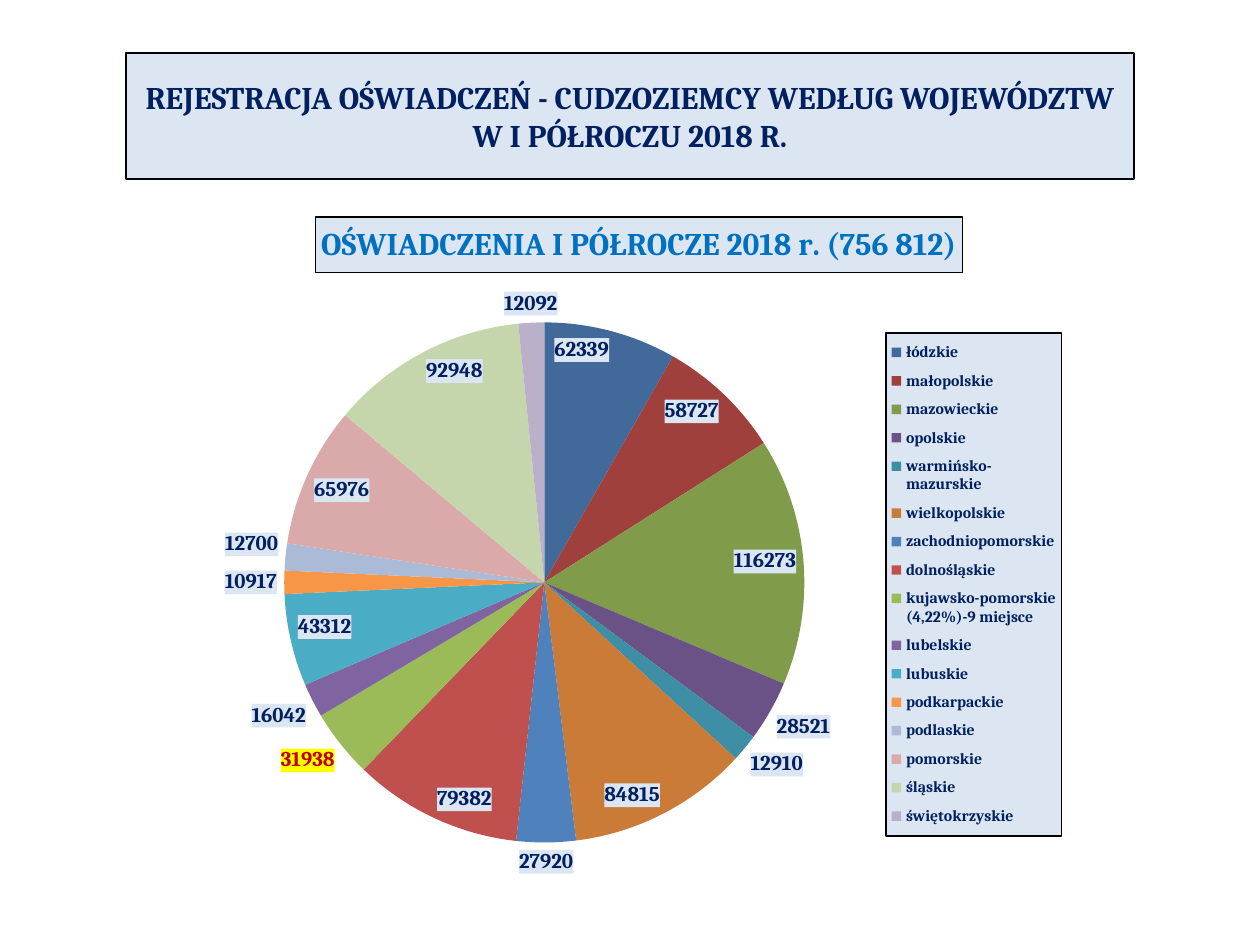
import pptx
import pptx.chart.data
import pptx.dml.color
import pptx.enum.chart
import pptx.enum.text
import pptx.oxml
import pptx.oxml.ns
import pptx.util

TITLE = "REJESTRACJA OŚWIADCZEŃ - CUDZOZIEMCY WEDŁUG WOJEWÓDZTW W I PÓŁROCZU 2018 R."
CHART_TITLE = "OŚWIADCZENIA I PÓŁROCZE 2018 r. (756 812)"
REGIONS = [
    ("łódzkie", 62339, "416A9B"),
    ("małopolskie", 58727, "9F403D"),
    ("mazowieckie", 116273, "809C4A"),
    ("opolskie", 28521, "6B5286"),
    ("warmińsko-mazurskie", 12910, "3E8EA5"),
    ("wielkopolskie", 84815, "CB7B38"),
    ("zachodniopomorskie", 27920, "4F81BD"),
    ("dolnośląskie", 79382, "C0504D"),
    ("kujawsko-pomorskie (4,22%)-9 miejsce", 31938, "9BBB59"),
    ("lubelskie", 16042, "8064A2"),
    ("lubuskie", 43312, "4BACC6"),
    ("podkarpackie", 10917, "F79646"),
    ("podlaskie", 12700, "AABAD7"),
    ("pomorskie", 65976, "D9AAA9"),
    ("śląskie", 92948, "C6D6AC"),
    ("świętokrzyskie", 12092, "BAB0C9"),
]
HIGHLIGHT = 8
INSIDE_FROM = 40000

THEME = {
    "panel": "DCE6F2", "border": "000000", "marker": "FFFF00",
    "title": {"name": "Cambria", "size": 18, "bold": True, "color": "002060"},
    "chart": {"name": "Calibri", "size": 18, "color": "000000"},
    "chart_title": {"name": "Cambria", "size": 18, "bold": True, "color": "0070C0"},
    "legend": {"name": "Cambria", "size": 9, "bold": True, "color": "002060"},
    "label": {"name": "Cambria", "size": 12, "bold": True, "color": "002060"},
    "highlight": {"name": "Cambria", "size": 12, "bold": True, "color": "C00000"},
}

PX = 914400 / 126
TITLE_BOX = (126, 53, 1008, 126)
CHART_BOX = (123, 204, 1008, 687)
PIE_BOX = (284, 322, 520, 521)
LEGEND_BOX = (886, 333, 175, 503)
CHART_TITLE_AT = (316, 217)


def emu(box):
    return [round(v * PX) for v in box]


def rgb(value):
    return pptx.dml.color.RGBColor.from_string(value)


def style(font, name):
    for key, value in THEME[name].items():
        if key == "color":
            font.color.rgb = rgb(value)
        else:
            setattr(font, key, pptx.util.Pt(value) if key == "size" else value)


def panel(shape):
    shape.fill.solid()
    shape.fill.fore_color.rgb = rgb(THEME["panel"])
    shape.line.color.rgb = rgb(THEME["border"])
    shape.line.width = pptx.util.Pt(0.75)


def box_xml(fill, line=None):
    solid = '<a:solidFill><a:srgbClr val="%s"/></a:solidFill>'
    outline = f'<a:ln w="9525">{solid % line}</a:ln>' if line else ""
    ns = pptx.oxml.ns.nsdecls("c", "a")
    return pptx.oxml.parse_xml(f"<c:spPr {ns}>{solid % fill}{outline}</c:spPr>")


def place(element, box, target=""):
    left, top, width, height = CHART_BOX
    parts = [(box[0] - left) / width, (box[1] - top) / height]
    if len(box) == 4:
        parts += [box[2] / width, box[3] / height]
    inner = f'<c:layoutTarget val="{target}"/>' if target else ""
    inner += '<c:xMode val="edge"/><c:yMode val="edge"/>'
    inner += "".join(f'<c:{k} val="{v:.3f}"/>' for k, v in zip("xywh", parts))
    ns = pptx.oxml.ns.nsdecls("c")
    layout = pptx.oxml.parse_xml(
        f"<c:layout {ns}><c:manualLayout>{inner}</c:manualLayout></c:layout>")
    for old in element.xpath("./c:layout"):
        element.remove(old)
    overlay = element.xpath("./c:overlay")
    if overlay:
        overlay[0].addprevious(layout)
    else:
        element.insert(0, layout)


def add_title(s):
    sp = s.shapes.title
    sp.left, sp.top, sp.width, sp.height = emu(TITLE_BOX)
    panel(sp)
    tf = sp.text_frame
    tf.word_wrap = True
    tf.vertical_anchor = pptx.enum.text.MSO_ANCHOR.MIDDLE
    p = tf.paragraphs[0]
    p.alignment = pptx.enum.text.PP_ALIGN.CENTER
    r = p.add_run()
    r.text = TITLE
    style(r.font, "title")


def add_pie(s):
    data = pptx.chart.data.CategoryChartData()
    data.categories = [name for name, _, _ in REGIONS]
    data.add_series(CHART_TITLE, [value for _, value, _ in REGIONS])
    kind = pptx.enum.chart.XL_CHART_TYPE.PIE
    chart = s.shapes.add_chart(kind, *emu(CHART_BOX), data).chart
    style(chart.font, "chart")
    root = chart.element

    chart.has_title = True
    p = chart.chart_title.text_frame.paragraphs[0]
    r = p.add_run()
    r.text = CHART_TITLE
    style(r.font, "chart_title")
    panel(chart.chart_title.format)
    place(root.xpath("./c:chart/c:title")[0], CHART_TITLE_AT)

    chart.has_legend = True
    chart.legend.position = pptx.enum.chart.XL_LEGEND_POSITION.RIGHT
    chart.legend.include_in_layout = False
    style(chart.legend.font, "legend")
    legend = root.xpath("./c:chart/c:legend")[0]
    place(legend, LEGEND_BOX)
    legend.xpath("./c:txPr")[0].addprevious(box_xml(THEME["panel"], THEME["border"]))

    place(root.xpath("./c:chart/c:plotArea")[0], PIE_BOX, "inner")
    plot = chart.plots[0]
    plot.vary_by_categories = True
    series = plot.series[0]
    series.data_labels.show_value = True
    style(series.data_labels.font, "label")
    spot = pptx.enum.chart.XL_LABEL_POSITION
    for i, (_, value, color) in enumerate(REGIONS):
        point = series.points[i]
        point.format.fill.solid()
        point.format.fill.fore_color.rgb = rgb(color)
        label = point.data_label
        style(label.font, "highlight" if i == HIGHLIGHT else "label")
        label.position = spot.INSIDE_END if value >= INSIDE_FROM else spot.OUTSIDE_END
    for i, text in enumerate(root.xpath(".//c:dLbl/c:txPr")):
        text.addprevious(box_xml(THEME["marker" if i == HIGHLIGHT else "panel"]))


def main():
    prs = pptx.Presentation()
    prs.slide_width, prs.slide_height = emu((1260, 945))
    s = prs.slides.add_slide(prs.slide_layouts[5])
    add_title(s)
    add_pie(s)
    prs.save("out.pptx")


if __name__ == "__main__":
    main()
